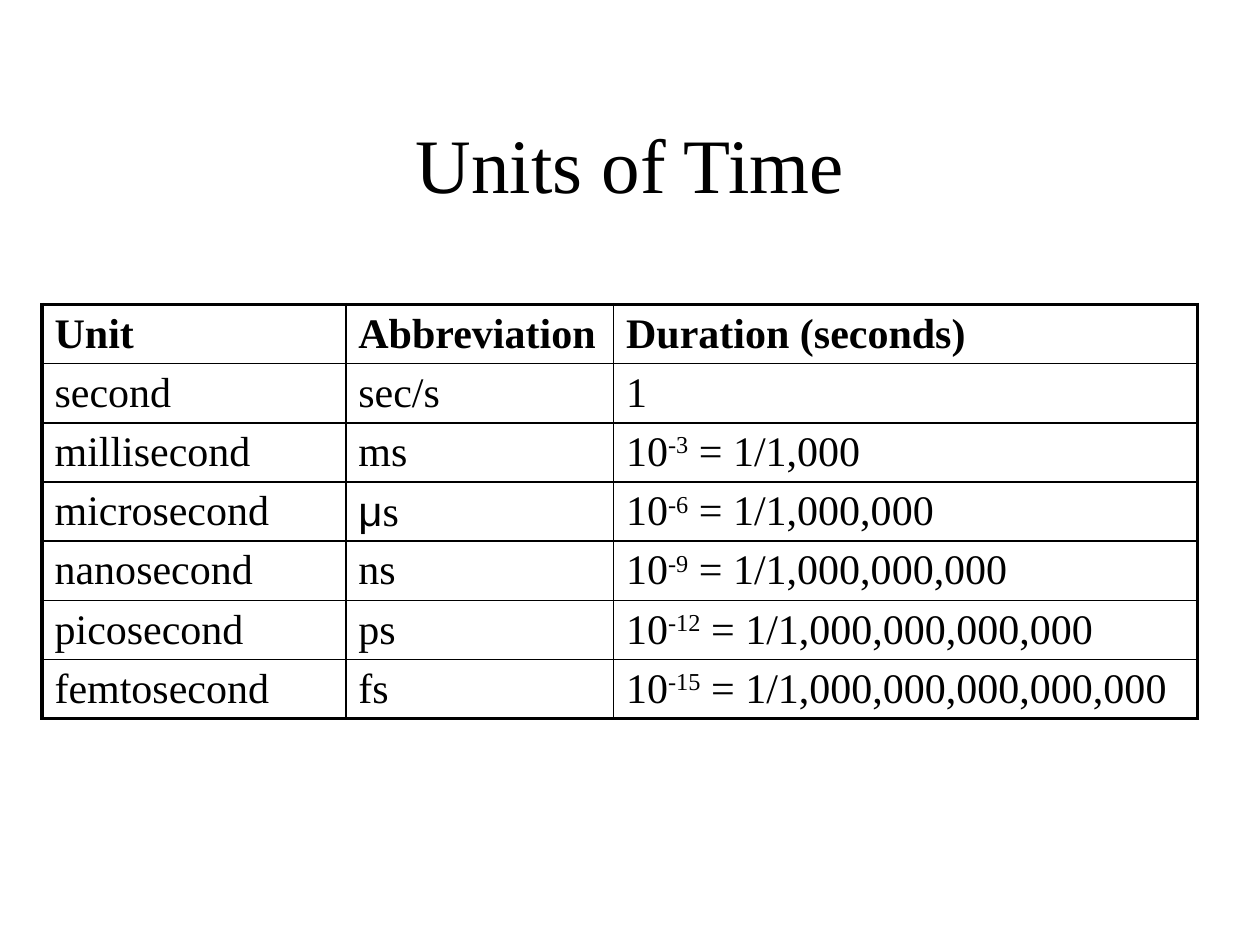
from dataclasses import dataclass

import lxml.etree
import pptx
import pptx.dml.color
import pptx.enum.text
import pptx.oxml.ns
import pptx.util

Pt = pptx.util.Pt


@dataclass(frozen=True)
class Theme:
    ink: str = "000000"
    font: str = "Times New Roman"
    symbol_font: str = "Arial"
    title_size: int = 44
    table_size: int = 24
    thin_line: float = 1
    thick_line: float = 2.25


theme = Theme()


def add_run(paragraph, text, size, bold=False, font=theme.font, raised=False):
    run = paragraph.add_run()
    run.text = text
    run.font.name = font
    run.font.size = Pt(size)
    run.font.bold = bold
    run.font.color.rgb = pptx.dml.color.RGBColor.from_string(theme.ink)
    if raised:
        run.font._element.set("baseline", "30000")


def add_border(cell, side, width):
    """Draw one side (L, R, T or B) of a cell as a solid line."""
    qn = pptx.oxml.ns.qn
    properties = cell._tc.get_or_add_tcPr()
    line = lxml.etree.SubElement(properties, qn(f"a:ln{side}"), w=str(Pt(width)))
    fill = lxml.etree.SubElement(line, qn("a:solidFill"))
    lxml.etree.SubElement(fill, qn("a:srgbClr"), val=theme.ink)


presentation = pptx.Presentation()
presentation.slide_width = Pt(720)
presentation.slide_height = Pt(540)
slide = presentation.slides.add_slide(presentation.slide_layouts[6])

# Title
title = slide.shapes.add_textbox(Pt(54), Pt(48), Pt(612), Pt(90))
title.text_frame.word_wrap = True
title.text_frame.vertical_anchor = pptx.enum.text.MSO_ANCHOR.MIDDLE
paragraph = title.text_frame.paragraphs[0]
paragraph.alignment = pptx.enum.text.PP_ALIGN.CENTER
add_run(paragraph, "Units of Time", theme.title_size)

# Table contents: each cell is a list of (text, run options)
headings = ["Unit", "Abbreviation", "Duration (seconds)"]
rows = [[[(heading, {"bold": True})] for heading in headings]]
rows.append([[("second", {})], [("sec/s", {})], [("1", {})]])
for step, prefix in enumerate(["milli", "micro", "nano", "pico", "femto"], start=1):
    if prefix == "micro":
        abbreviation = [("μ", {"font": theme.symbol_font}), ("s", {})]
    else:
        abbreviation = [(prefix[0] + "s", {})]
    duration = [
        ("10", {}),
        (f"-{3 * step}", {"raised": True}),
        (" = 1/1" + ",000" * step, {}),
    ]
    rows.append([[(prefix + "second", {})], abbreviation, duration])

# Table
column_widths = [173.6, 153, 333.6]
row_height = 33.8
table = slide.shapes.add_table(
    len(rows), len(column_widths), Pt(24), Pt(174),
    Pt(sum(column_widths)), Pt(row_height * len(rows)),
).table
table.first_row = False
table.horz_banding = False
for column, width in zip(table.columns, column_widths):
    column.width = Pt(width)

last_row, last_column = len(rows) - 1, len(column_widths) - 1
for row_index, row in enumerate(rows):
    table.rows[row_index].height = Pt(row_height)
    for column_index, runs in enumerate(row):
        cell = table.cell(row_index, column_index)
        cell.margin_bottom = Pt(1.4)
        for text, options in runs:
            add_run(cell.text_frame.paragraphs[0], text, theme.table_size, **options)
        outer_sides = {
            "L": column_index == 0,
            "R": column_index == last_column,
            "T": row_index == 0,
            "B": row_index == last_row,
        }
        for side, is_outer in outer_sides.items():
            add_border(cell, side, theme.thick_line if is_outer else theme.thin_line)
        cell.fill.background()

presentation.save("out.pptx")
